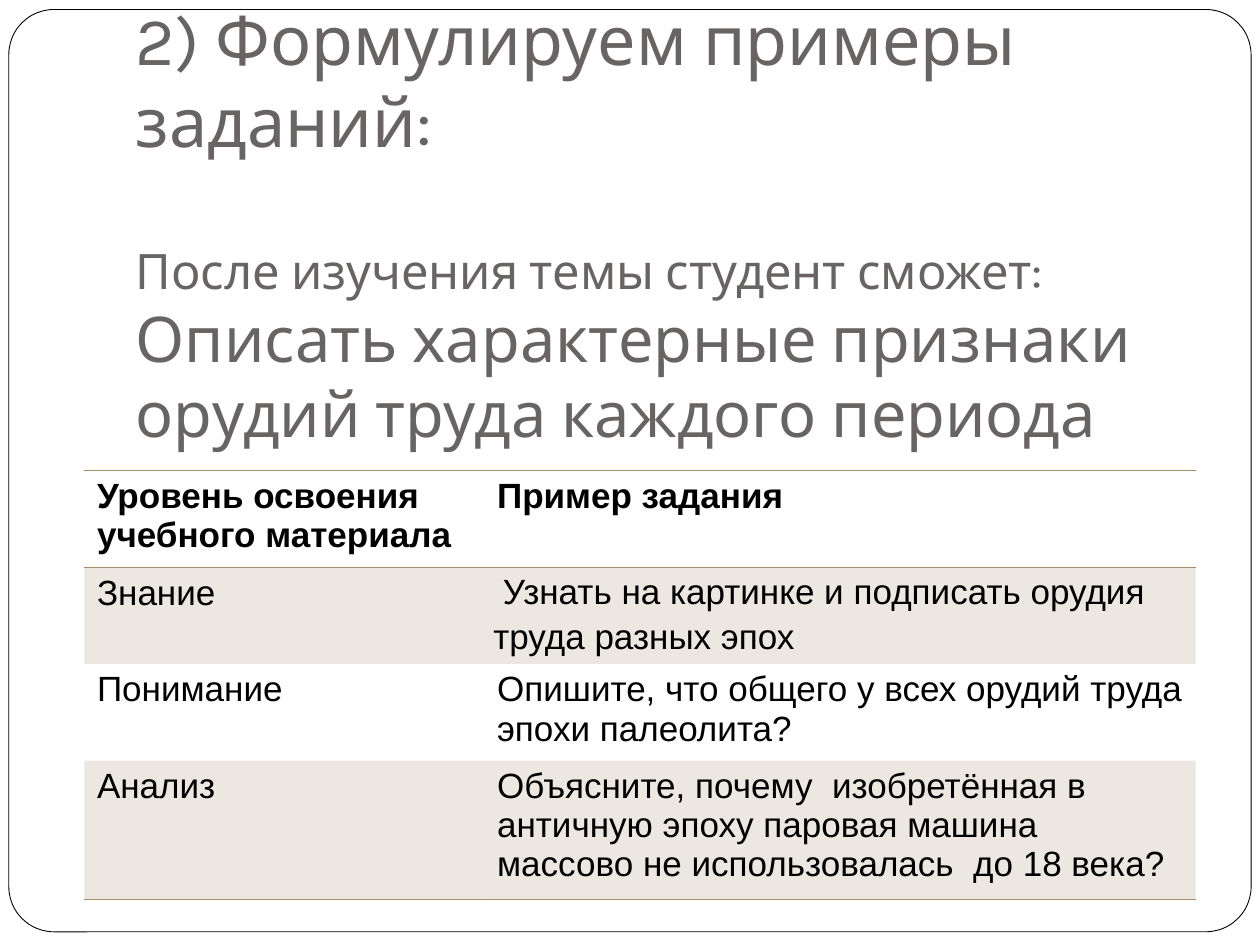
"""Builds a slide of sample tasks for three levels of learning."""
from dataclasses import dataclass

from lxml import etree
from pptx import Presentation
from pptx.dml.color import RGBColor
from pptx.enum.shapes import MSO_SHAPE
from pptx.enum.text import MSO_ANCHOR
from pptx.oxml.ns import qn
from pptx.util import Inches, Pt

ROUND = MSO_SHAPE.ROUNDED_RECTANGLE
BOTTOM = MSO_ANCHOR.BOTTOM
WIDE, HIGH = Inches(10), Inches(7.5)
PLAIN = "{2D5ABB26-0587-4C30-8999-92F81FD0307C}"


@dataclass(frozen=True)
class Theme:
    """Colours, fonts and type sizes."""
    paper: str = "FFFFFF"
    ink: str = "000000"
    gray: str = "696464"
    sand: str = "A28E6A"
    tint: int = 20
    head: str = "Karla"
    body: str = "Arial"
    big: float = 39
    mid: float = 36
    lead: float = 27.9
    cell: float = 20


@dataclass(frozen=True)
class Box:
    """A place given in shares of the slide's size."""
    left: float
    top: float
    width: float
    height: float

    def place(self) -> tuple[int, int, int, int]:
        """Return the place in slide units."""
        return (int(self.left * WIDE), int(self.top * HIGH),
                int(self.width * WIDE), int(self.height * HIGH))


@dataclass(frozen=True)
class Line:
    """One line of a heading and its size."""
    text: str
    size: float


@dataclass(frozen=True)
class Level:
    """A table row: a level, its task and the row's look."""
    name: str
    task: str
    share: float
    edges: str = ""
    bold: bool = False
    shade: bool = False
    loose: bool = False


THEME = Theme()
FRAME = Box(0.007, 0.01, 0.986, 0.976)
GRID = Box(0.067, 0.498, 0.882, 0.425)
COLS = (0.36, 0.64)
HEADS = (
    (Box(0.098, 0.323, 0.85, 0.167), (
        Line("После изучения темы студент сможет:", THEME.lead),
        Line("Описать характерные признаки орудий труда каждого периода",
             THEME.mid))),
    (Box(0.098, 0.017, 0.85, 0.167), (
        Line("2) Формулируем примеры заданий:", THEME.big),)),
)
LEVELS = (
    Level("Уровень освоения учебного материала", "Пример задания",
          0.225, edges="TB", bold=True),
    Level("Знание", " Узнать на картинке и подписать орудия труда разных эпох",
          0.225, shade=True, loose=True),
    Level("Понимание",
          "Опишите, что общего у всех орудий труда эпохи палеолита?", 0.225),
    Level("Анализ",
          "Объясните, почему  изобретённая в античную эпоху паровая машина "
          "массово не использовалась  до 18 века?",
          0.325, edges="B", shade=True),
)


def hue(code: str) -> RGBColor:
    """Turn a hex code into a colour."""
    return RGBColor.from_string(code)


def draw_frame(slide) -> None:
    """Draw the rounded frame round the slide."""
    shape = slide.shapes.add_shape(ROUND, *FRAME.place())
    shape.adjustments[0] = 0.049
    shape.shadow.inherit = False
    shape.fill.solid()
    shape.fill.fore_color.rgb = hue(THEME.paper)
    shape.line.color.rgb = hue(THEME.ink)
    shape.line.width = Pt(0.5)


def draw_head(slide, box: Box, lines: tuple[Line, ...]) -> None:
    """Draw a heading whose lines share one paragraph."""
    frame = slide.shapes.add_textbox(*box.place()).text_frame
    frame.word_wrap = True
    frame.vertical_anchor = BOTTOM
    frame.margin_bottom = Inches(0.1)
    para = frame.paragraphs[0]
    para.font.name = THEME.head
    para.font.color.rgb = hue(THEME.gray)
    for index, line in enumerate(lines):
        if index:
            para.add_line_break()
        run = para.add_run()
        run.text = line.text
        run.font.name = THEME.head
        run.font.color.rgb = hue(THEME.gray)
        run.font.size = Pt(line.size)


def add_edge(cell, side: str) -> None:
    """Rule one side of a cell."""
    props = cell._tc.get_or_add_tcPr()
    edge = etree.SubElement(props, qn(f"a:ln{side}"), w=str(Pt(1)))
    fill = etree.SubElement(edge, qn("a:solidFill"))
    etree.SubElement(fill, qn("a:srgbClr"), val=THEME.sand)


def tint(cell) -> None:
    """Fill a cell with a sheer tint."""
    cell.fill.solid()
    cell.fill.fore_color.rgb = hue(THEME.sand)
    tone = cell._tc.tcPr.find(f".//{qn('a:solidFill')}[last()]")
    tone = cell._tc.tcPr.findall(qn("a:solidFill"))[-1][0]
    etree.SubElement(tone, qn("a:alpha"), val=str(THEME.tint * 1000))


def fill_cell(cell, text: str, level: Level) -> None:
    """Write and dress one cell."""
    cell.text = text
    font = cell.text_frame.paragraphs[0].font
    font.name, font.size, font.bold = THEME.body, Pt(THEME.cell), level.bold
    font.color.rgb = hue(THEME.ink)
    for side in level.edges:
        add_edge(cell, side)
    if level.shade:
        tint(cell)
    else:
        cell.fill.background()


def draw_table(slide) -> None:
    """Draw the table of levels and tasks."""
    left, top, width, height = GRID.place()
    table = slide.shapes.add_table(
        len(LEVELS), len(COLS), left, top, width, height).table
    table._tbl.tblPr.find(qn("a:tableStyleId")).text = PLAIN
    for col, share in zip(table.columns, COLS):
        col.width = int(width * share)
    for row, level in zip(table.rows, LEVELS):
        row.height = int(height * level.share)
        for cell, text in zip(row.cells, (level.name, level.task)):
            fill_cell(cell, text, level)
        if level.loose:
            cell = row.cells[1]
            cell.margin_left = cell.margin_right = Inches(0.07)
            cell.margin_top = cell.margin_bottom = 0
            cell.text_frame.paragraphs[0].line_spacing = 1.15


def main() -> None:
    """Build and save the slide."""
    deck = Presentation()
    deck.slide_width, deck.slide_height = WIDE, HIGH
    slide = deck.slides.add_slide(deck.slide_layouts[6])
    draw_frame(slide)
    (aim, goals), (title, words) = HEADS
    draw_head(slide, aim, goals)
    draw_table(slide)
    draw_head(slide, title, words)
    deck.save("out.pptx")


if __name__ == "__main__":
    main()
